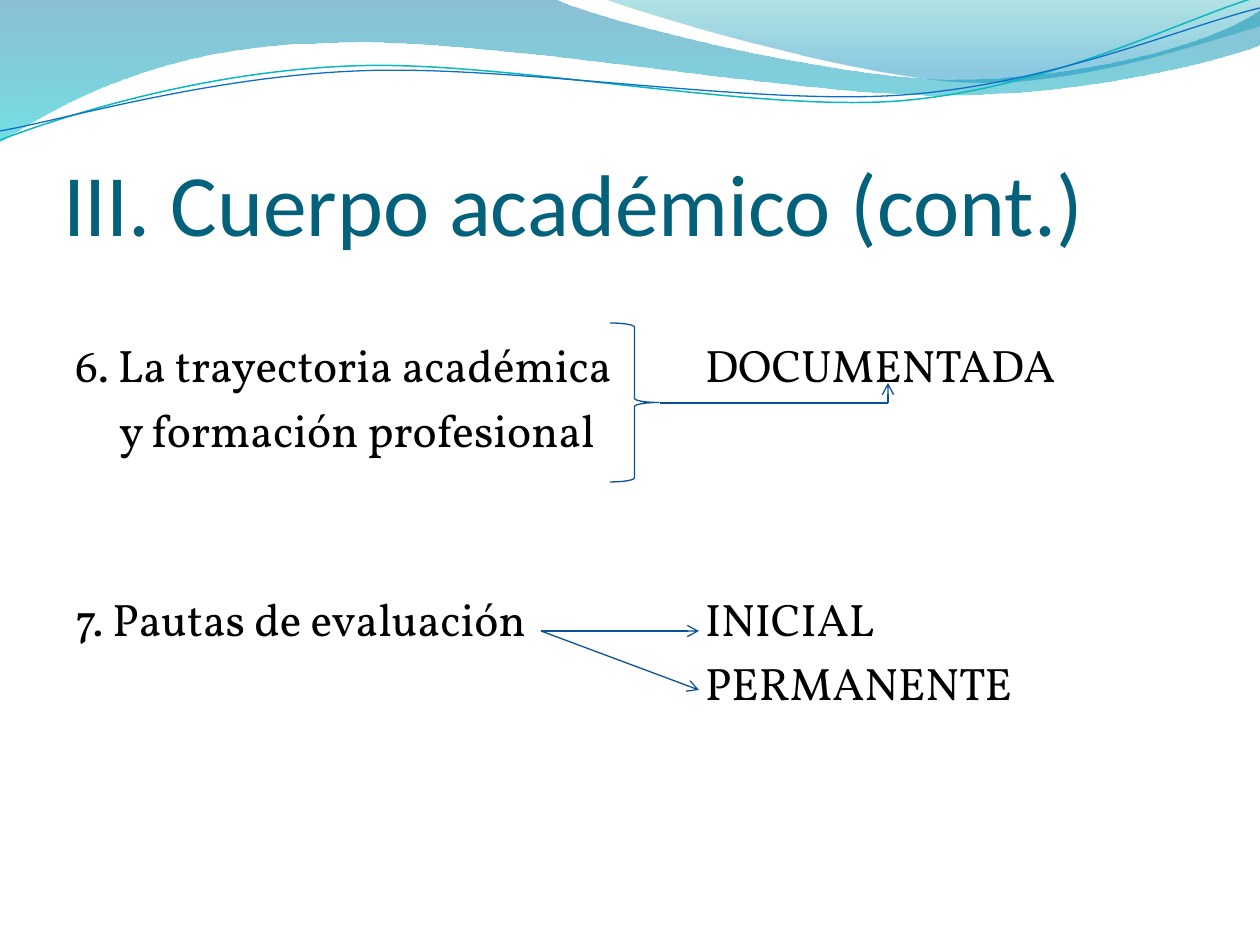
from lxml import etree
from pptx import Presentation, util as u
from pptx.dml.color import RGBColor
from pptx.enum import shapes, text
from pptx.oxml.ns import qn

SCALE = 914400 / 126
COLORS = {
    "title": "04617B", "body": "000000", "line": "095295",
    "deep": "0074A1", "aqua": "00C6CF", "teal": "00A1A9", "sky": "008BBF",
    "teal_line": "0AB8BF", "blue_line": "0F6FC6",
}


def px(n):
    return u.Emu(round(n * SCALE))


def color(name):
    return RGBColor.from_string(COLORS[name])


class Deck:
    heading_font, body_font = "Calibri", "Vollkorn"
    pitch, tab = 64, 630

    def __init__(self):
        self.prs = Presentation()
        self.prs.slide_width, self.prs.slide_height = px(1260), px(945)
        self.s = self.prs.slides.add_slide(self.prs.slide_layouts[1])

    def stroke(self, sp, name="line", width=0.75):
        sp.line.color.rgb = color(name)
        sp.line.width = u.Pt(width)

    def freeform(self, start, segments, close):
        builder = self.s.shapes.build_freeform(*map(px, start), scale=1.0)
        points = [(px(x), px(y)) for seg in segments
                  for x, y in zip(seg[::2], seg[1::2])]
        builder.add_line_segments(points, close=close)
        sp = builder.convert_to_shape()
        sp.shadow.inherit = False
        nodes = iter(list(sp._element.iter(qn("a:lnTo"))))
        for seg in segments:
            group = [next(nodes) for _ in seg[::2]]
            if len(group) == 3:
                bezier = etree.Element(qn("a:cubicBezTo"))
                group[0].addprevious(bezier)
                for node in group:
                    bezier.append(node[0])
                    node.getparent().remove(node)
        return sp

    def wave(self, start, segments, stops):
        sp = self.freeform(start, segments, True)
        sp.line.fill.background()
        sp.fill.gradient()
        sp.fill.gradient_angle = 270
        for stop, (position, name, _) in zip(sp.fill.gradient_stops, stops):
            stop.position = position
            stop.color.rgb = color(name)
        for node, (_, _, opacity) in zip(sp._element.spPr.iter(qn("a:srgbClr")), stops):
            etree.SubElement(node, qn("a:alpha"), val=str(opacity * 1000))

    def curve(self, start, segments, name, width):
        sp = self.freeform(start, segments, False)
        sp.fill.background()
        self.stroke(sp, name, width)

    def placeholder(self, index, box, insets):
        sp = self.s.placeholders[index]
        sp.left, sp.top, sp.width, sp.height = map(px, box)
        tf = sp.text_frame
        tf.word_wrap = True
        tf.auto_size = text.MSO_AUTO_SIZE.NONE
        tf.margin_left, tf.margin_top, tf.margin_right, tf.margin_bottom = map(px, insets)
        return tf

    def run(self, p, words, font, size, name):
        r = p.add_run()
        r.text = words
        r.font.name, r.font.size = font, u.Pt(size)
        r.font.color.rgb = color(name)

    def title(self, words, box):
        tf = self.placeholder(0, box, (0, 6, 0, 7))
        tf.vertical_anchor = text.MSO_ANCHOR.BOTTOM
        p = tf.paragraphs[0]
        p.alignment = text.PP_ALIGN.LEFT
        self.run(p, words, self.heading_font, 50, "title")
        tf.margin_bottom = px(1)

    def body(self, lines, box):
        tf = self.placeholder(1, box, (12, 61, 12, 6))
        tf.vertical_anchor = text.MSO_ANCHOR.TOP
        for i, (words, indent, gap) in enumerate(lines):
            p = tf.add_paragraph() if i else tf.paragraphs[0]
            p.alignment = text.PP_ALIGN.LEFT
            p.line_spacing = u.Pt(round(px(self.pitch).pt, 1))
            p.space_before = u.Pt(round(px(gap).pt, 1))
            pPr = p._p.get_or_add_pPr()
            pPr.set("marL", str(px(indent)))
            pPr.set("indent", "0")
            pPr.set("defTabSz", str(px(self.tab)))
            etree.SubElement(pPr, qn("a:buNone"))
            self.run(p, words, self.body_font, 26, "body")

    def brace(self, box):
        sp = self.s.shapes.add_shape(shapes.MSO_SHAPE.RIGHT_BRACE, *map(px, box))
        sp.shadow.inherit = False
        sp.fill.background()
        self.stroke(sp)

    def connector(self, start, end, arrow=True):
        c = self.s.shapes.add_connector(
            shapes.MSO_CONNECTOR.STRAIGHT, *map(px, start + end))
        self.stroke(c)
        spPr = c._element.spPr
        if arrow:
            etree.SubElement(spPr.find(qn("a:ln")), qn("a:tailEnd"), type="arrow")
        etree.SubElement(spPr, qn("a:effectLst"))


def main():
    deck = Deck()
    deck.wave((0, 0), [
        (554, -1), (600, 21, 837, 79, 955, 79), (1075, 79, 1207, 47, 1260, 11),
        (1261, 45), (1237, 55, 1096, 96, 940, 95), (784, 95, 481, 35, 324, 43),
        (163, 45, 58, 105, -1, 142),
    ], [(0, "deep", 45), (1, "aqua", 55)])
    deck.wave((604, -1), [
        (641, 14, 859, 78, 969, 82), (1079, 86, 1211, 40, 1260, 26), (1260, 0),
    ], [(0, "teal", 30), (0.8, "sky", 45)])
    deck.curve((0, 140), [
        (60, 117, 199, 72, 349, 66), (498, 59, 747, 112, 898, 101),
        (1050, 89, 1182, 19, 1257, -3),
    ], "teal_line", 0.85)
    deck.curve((0, 131), [
        (59, 121, 207, 77, 357, 71), (508, 64, 752, 106, 903, 95),
        (1053, 84, 1185, 26, 1260, 8),
    ], "blue_line", 0.75)

    deck.title("III. Cuerpo académico (cont.)", (63, 97, 1134, 158))
    deck.body([
        ("6. La trayectoria académica\tDOCUMENTADA", 0, 0),
        ("y formación profesional", 44, 0),
        ("7. Pautas de evaluación\tINICIAL", 0, 125),
        ("PERMANENTE", deck.tab, 0),
    ], (63, 267, 1134, 605))

    deck.brace((610, 323, 49, 159))
    deck.connector((660, 403), (888, 403), arrow=False)
    deck.connector((888, 403), (888, 383))
    for target in ((699, 631), (699, 690)):
        deck.connector((541, 631), target)
    deck.prs.save("out.pptx")


if __name__ == "__main__":
    main()
